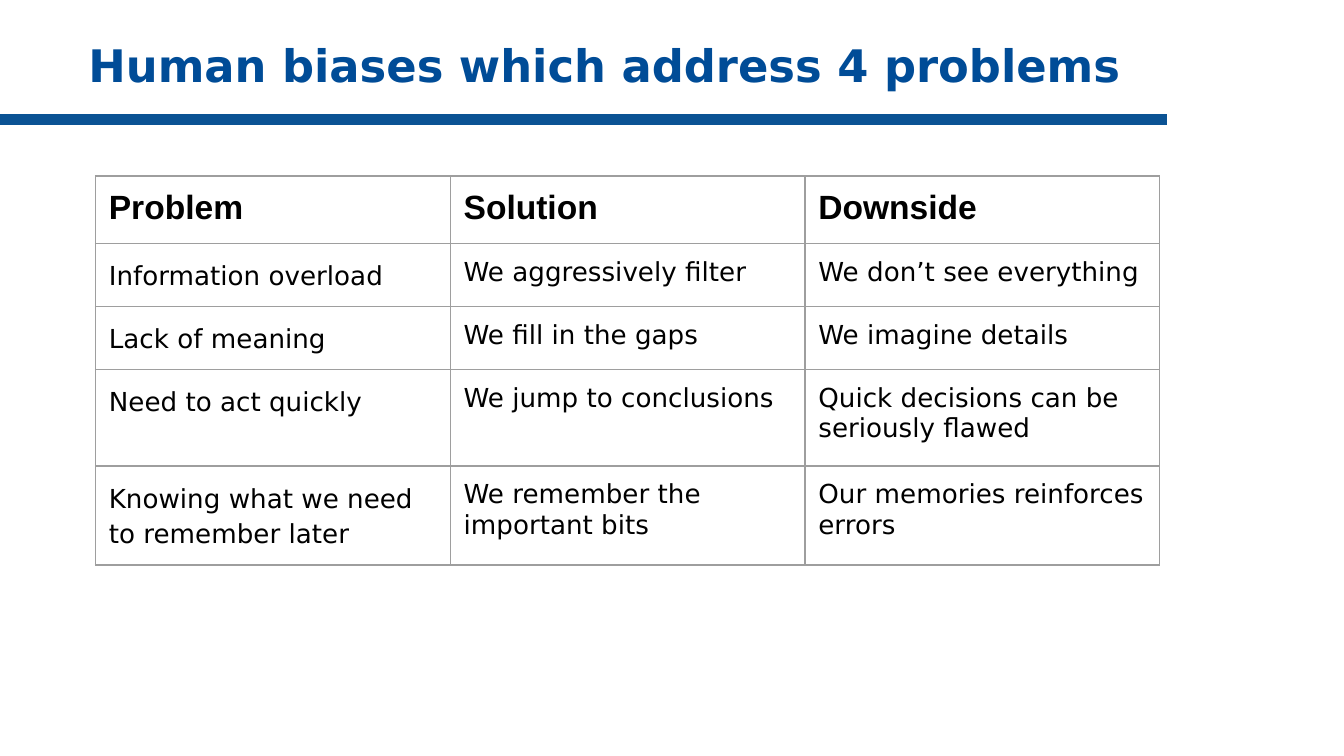
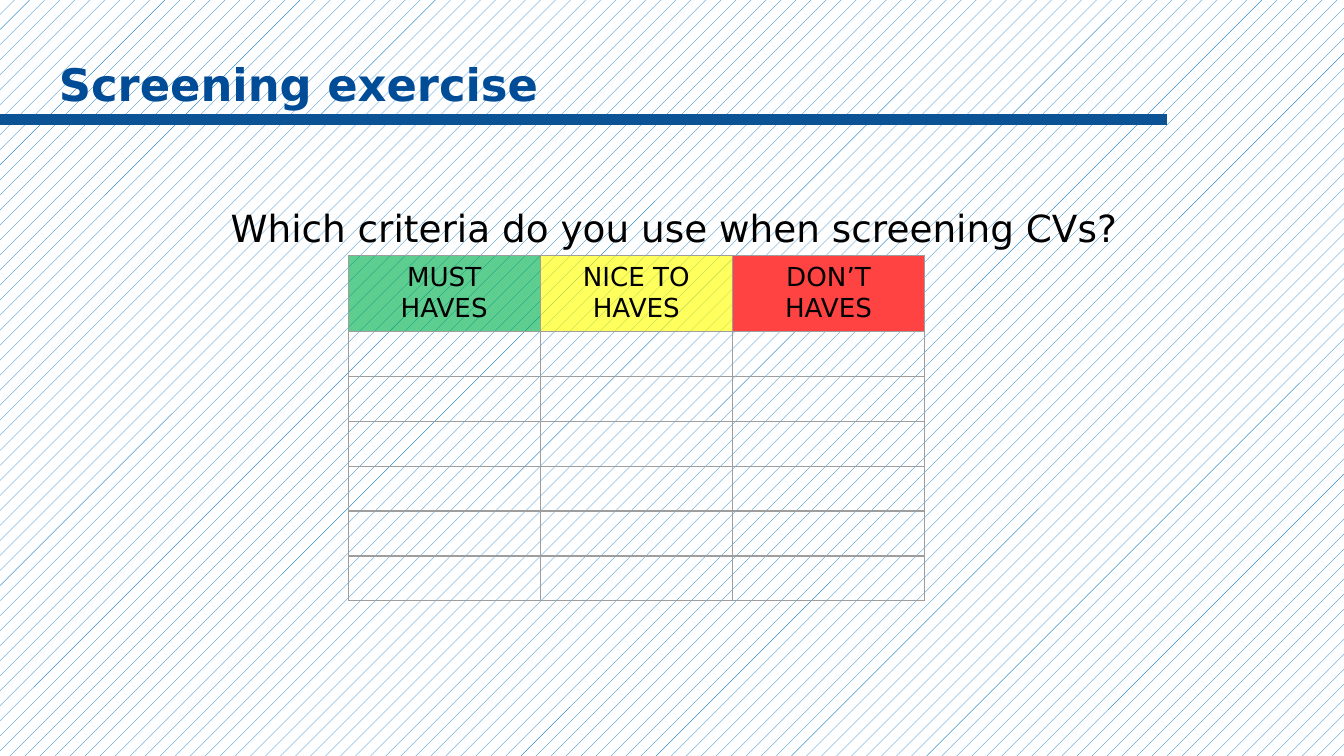
from lxml import etree
from pptx import Presentation
from pptx.dml.color import RGBColor
from pptx.enum.dml import MSO_PATTERN
from pptx.enum.shapes import MSO_CONNECTOR
from pptx.enum.text import MSO_ANCHOR, PP_ALIGN
from pptx.oxml.ns import qn
from pptx.util import Inches, Pt

STRAIGHT = MSO_CONNECTOR.STRAIGHT
DOTTED = MSO_PATTERN.PERCENT_10
TOP = MSO_ANCHOR.TOP
LEFT, CENTER = PP_ALIGN.LEFT, PP_ALIGN.CENTER

WHITE = RGBColor(0xFF, 0xFF, 0xFF)
BLACK = RGBColor(0x00, 0x00, 0x00)
TITLE_BLUE = RGBColor(0x00, 0x4C, 0x97)
RULE_BLUE = RGBColor(0x0B, 0x53, 0x94)
PATTERN_BLUE = RGBColor(0x00, 0x70, 0xC0)
BORDER_GREY = RGBColor(0x9E, 0x9E, 0x9E)
GREEN = RGBColor(0x00, 0xB0, 0x50)
YELLOW = RGBColor(0xFF, 0xFF, 0x00)
RED = RGBColor(0xFF, 0x43, 0x43)

BODY_FONT = "DejaVu Sans"
HEADER_FONT = "Arial"

# Content
BIASES_TITLE = "Human biases which address 4 problems"
BIASES = [
    ("Problem", "Solution", "Downside"),
    ("Information overload", "We aggressively filter", "We don’t see everything"),
    ("Lack of meaning", "We fill in the gaps", "We imagine details"),
    ("Need to act quickly", "We jump to conclusions",
     "Quick decisions can be seriously flawed"),
    ("Knowing what we need to remember later", "We remember the important bits",
     "Our memories reinforces errors"),
]
BIAS_ROW_HEIGHTS = [0.42, 0.42, 0.42, 0.72, 0.42]

SCREENING_TITLE = "Screening exercise"
QUESTION = "Which criteria do you use when screening CVs? "
CRITERIA = [  # heading, colour, opacity in percent
    ("MUST HAVES", GREEN, 63),
    ("NICE TO HAVES", YELLOW, 63),
    ("DON’T HAVES", RED, 100),
]
EMPTY_ROWS = 6


def write(frame, text, size=14, font=BODY_FONT, color=BLACK, bold=False,
          align=LEFT, spacing=None, indent=0):
    """Put one formatted paragraph into a text frame."""
    frame.word_wrap = True
    paragraph = frame.paragraphs[0]
    paragraph.alignment = align
    if spacing:
        paragraph.line_spacing = spacing
    if indent:
        properties = paragraph._p.get_or_add_pPr()
        properties.set("marL", str(Inches(indent)))
        properties.set("indent", "0")
    if not text:
        # The end mark sets the line height of an empty cell
        end = etree.SubElement(paragraph._p, qn("a:endParaRPr"), sz=str(size * 100))
        etree.SubElement(end, qn("a:latin"), typeface=font)
        return
    run = paragraph.add_run()
    run.text = text
    run.font.size = Pt(size)
    run.font.name = font
    run.font.bold = bold
    run.font.color.rgb = color


def add_text(slide, text, left, top, width, height, **text_format):
    frame = slide.shapes.add_textbox(
        Inches(left), Inches(top), Inches(width), Inches(height)).text_frame
    frame.margin_left = frame.margin_right = Inches(0.1)
    frame.margin_top = frame.margin_bottom = Inches(0.1)
    frame.vertical_anchor = TOP
    write(frame, text, **text_format)


def add_titled_slide(presentation, title, left, top, height):
    """Blank slide with the shared rule and title style."""
    slide = presentation.slides.add_slide(presentation.slide_layouts[6])
    rule = slide.shapes.add_connector(
        STRAIGHT, 0, Inches(0.89), Inches(8.68), Inches(0.89))
    rule.line.color.rgb = RULE_BLUE
    rule.line.width = Pt(6)
    etree.SubElement(rule._element.spPr, qn("a:effectLst"))
    add_text(slide, title, left, top, 9.32, height,
             size=24, color=TITLE_BLUE, bold=True)
    return slide


def add_grid(slide, left, top, column_width, row_heights, columns=3):
    """Plain table with thin grey borders and no fill."""
    table = slide.shapes.add_table(
        len(row_heights), columns, Inches(left), Inches(top),
        Inches(column_width * columns), Inches(sum(row_heights))).table
    table.first_row = table.horz_banding = False
    for column in table.columns:
        column.width = Inches(column_width)
    for row, height in zip(table.rows, row_heights):
        row.height = Inches(height)
    for cell in table.iter_cells():
        properties = cell._tc.get_or_add_tcPr()
        for side in ("a:lnL", "a:lnR", "a:lnT", "a:lnB"):
            border = etree.SubElement(properties, qn(side), w=str(Pt(0.75)))
            fill = etree.SubElement(border, qn("a:solidFill"))
            etree.SubElement(fill, qn("a:srgbClr"), val=str(BORDER_GREY))
        cell.fill.background()
    return table


def fill_cell(cell, color, opacity):
    cell.fill.solid()
    cell.fill.fore_color.rgb = color
    if opacity < 100:
        color_element = cell._tc.tcPr.find(qn("a:solidFill"))[0]
        etree.SubElement(color_element, qn("a:alpha"), val=str(opacity * 1000))


def build_biases(presentation):
    slide = add_titled_slide(presentation, BIASES_TITLE, 0.56, 0.18, 0.71)
    slide.background.fill.solid()
    slide.background.fill.fore_color.rgb = WHITE
    table = add_grid(slide, 0.71, 1.31, 2.64, BIAS_ROW_HEIGHTS)
    for row, texts in enumerate(BIASES):
        for column, text in enumerate(texts):
            cell = table.cell(row, column)
            cell.margin_top = cell.margin_bottom = Inches(0.1)
            cell.margin_left = cell.margin_right = Inches(0.1)
            if row == 0:
                write(cell.text_frame, text, size=18, font=HEADER_FONT, bold=True)
            else:
                write(cell.text_frame, text, spacing=1.15 if column == 0 else None)


def build_screening(presentation):
    slide = add_titled_slide(presentation, SCREENING_TITLE, 0.34, 0.32, 0.63)
    background = slide.background.fill
    background.patterned()
    background.pattern = DOTTED
    background.fore_color.rgb = PATTERN_BLUE
    background.back_color.rgb = WHITE
    table = add_grid(slide, 2.59, 1.9, 1.43, [0.49] + [0.32] * EMPTY_ROWS)
    for column, (heading, color, opacity) in enumerate(CRITERIA):
        fill_cell(table.cell(0, column), color, opacity)
        for row, text in enumerate([heading] + [""] * EMPTY_ROWS):
            write(table.cell(row, column).text_frame, text, align=CENTER)
    add_text(slide, QUESTION, 0.34, 1.26, 9.32, 3.74,
             size=20, align=CENTER, spacing=1.5, indent=0.12)


def main():
    presentation = Presentation()
    # Widescreen, 16 to 9
    presentation.slide_width = Inches(10)
    presentation.slide_height = Inches(10) * 9 // 16
    build_biases(presentation)
    build_screening(presentation)
    presentation.save("out.pptx")


if __name__ == "__main__":
    main()
